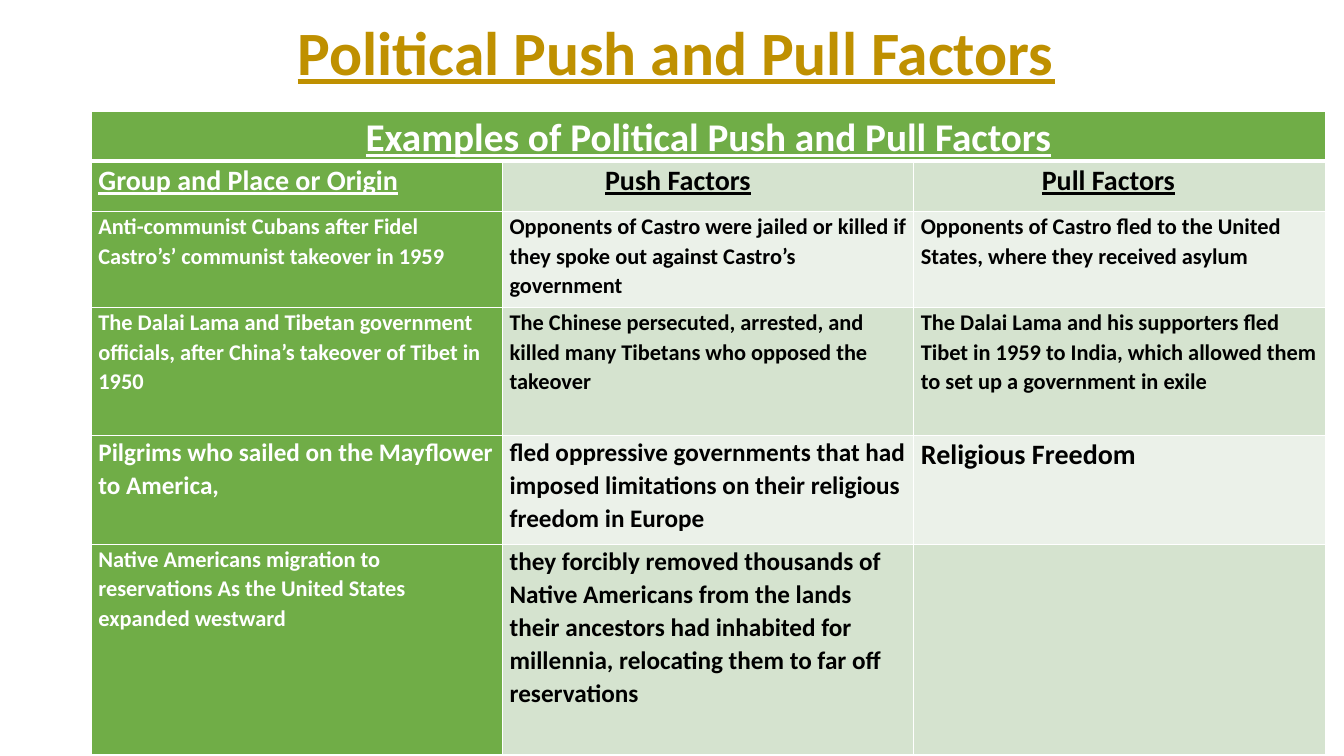
from dataclasses import dataclass

from lxml.etree import SubElement
from pptx import Presentation
from pptx.dml.color import RGBColor
from pptx.enum.text import MSO_ANCHOR, PP_ALIGN
from pptx.oxml.ns import qn
from pptx.util import Inches, Pt


@dataclass(frozen=True)
class Theme:
    font: str = "Calibri"
    gold: str = "BF9000"
    green: str = "70AD47"
    bands: tuple = ("EBF1E9", "D5E3CF")
    white: str = "FFFFFF"
    black: str = "000000"
    title: int = 44
    banner: int = 28
    heading: int = 20
    large: int = 18
    body: int = 16
    line: int = 1
    thick_line: int = 3


T = Theme()
WIDTH, HEIGHT = Inches(13.33), Inches(7.5)
LEFT, COLUMN = 6.8, 30.6
ROWS = (6.67, 6.67, 12.67, 16.93, 14.4, 27.87)
BANNER = "Examples of Political Push and Pull Factors"
HEADINGS = (
    ("Group and Place or Origin", 0),
    ("Push Factors", 7.1),
    ("Pull Factors", 9),
)
GROUPS = (
    (("Anti-communist Cubans after Fidel Castro’s’ communist takeover in 1959", T.body),
     ("Opponents of Castro were jailed or killed if they spoke out against "
      "Castro’s government", T.body),
     ("Opponents of Castro fled to the United States, where they received asylum", T.body)),
    (("The Dalai Lama and Tibetan government officials, after China’s takeover "
      "of Tibet in 1950", T.body),
     ("The Chinese persecuted, arrested, and killed many Tibetans who opposed "
      "the takeover", T.body),
     ("The Dalai Lama and his supporters fled Tibet in 1959 to India, which "
      "allowed them to set up a government in exile", T.body)),
    (("Pilgrims who sailed on the Mayflower to America,", T.large),
     ("fled oppressive governments that had imposed limitations on their "
      "religious freedom in Europe", T.large),
     ("Religious Freedom", T.heading)),
    (("Native Americans migration to reservations As the United States "
      "expanded westward", T.body),
     ("they forcibly removed thousands of Native Americans from the lands their "
      "ancestors had inhabited for millennia, relocating them to far off "
      "reservations", T.large),
     ("", T.large)),
)


def across(percent):
    return int(WIDTH * percent / 100)


def down(percent):
    return int(HEIGHT * percent / 100)


def write(tf, text, *, size, color, underline=False, align=PP_ALIGN.LEFT,
          indent=0, spacing=1.07):
    tf.word_wrap = True
    p = tf.paragraphs[0]
    p.alignment = align
    p.line_spacing = spacing
    p._p.get_or_add_pPr().set("marL", str(across(indent)))
    if not text:
        p.font.size = Pt(size)
        return
    r = p.add_run()
    r.text = text
    r.font.name = T.font
    r.font.size = Pt(size)
    r.font.bold = True
    r.font.underline = underline
    r.font.color.rgb = RGBColor.from_string(color)


def set_borders(cell, bottom=T.line, top=T.line):
    tcPr = cell._tc.get_or_add_tcPr()
    sides = (("a:lnL", T.line), ("a:lnR", T.line), ("a:lnT", top), ("a:lnB", bottom))
    for tag, width in sides:
        ln = SubElement(tcPr, qn(tag), w=str(Pt(width)))
        fill = SubElement(ln, qn("a:solidFill"))
        SubElement(fill, qn("a:srgbClr"), val=T.white)


def style_cell(cell, fill, **borders):
    set_borders(cell, **borders)
    cell.fill.solid()
    cell.fill.fore_color.rgb = RGBColor.from_string(fill)
    cell.margin_left = cell.margin_right = Inches(0.07)
    cell.margin_top = cell.margin_bottom = 0


def add_title(s, text):
    sp = s.shapes.add_textbox(across(LEFT), down(1.73), across(91), down(11.2))
    tf = sp.text_frame
    tf.vertical_anchor = MSO_ANCHOR.MIDDLE
    write(tf, text, size=T.title, color=T.gold, underline=True, indent=14.6, spacing=0.9)


def add_factors_table(s):
    columns = len(HEADINGS)
    table = s.shapes.add_table(len(ROWS), columns, across(LEFT), down(14.67),
                               across(COLUMN * columns), down(sum(ROWS))).table
    for column in table.columns:
        column.width = across(COLUMN)
    for row, share in zip(table.rows, ROWS):
        row.height = down(share)

    banner = table.cell(0, 0)
    banner.merge(table.cell(0, columns - 1))
    for c in range(columns):
        style_cell(table.cell(0, c), T.green, bottom=T.thick_line)
    write(banner.text_frame, BANNER, size=T.banner, color=T.white,
          underline=True, align=PP_ALIGN.CENTER)

    headings = [(text, dict(size=T.heading, underline=True, indent=indent))
                for text, indent in HEADINGS]
    groups = [[(text, dict(size=size)) for text, size in group] for group in GROUPS]
    for r, entries in enumerate([headings, *groups], 1):
        for c, (text, style) in enumerate(entries):
            cell = table.cell(r, c)
            style_cell(cell, T.bands[r % 2] if c else T.green,
                       top=T.thick_line if r == 1 else T.line)
            write(cell.text_frame, text, color=T.black if c else T.white, **style)


def main():
    prs = Presentation()
    prs.slide_width, prs.slide_height = WIDTH, HEIGHT
    s = prs.slides.add_slide(prs.slide_layouts[6])
    add_title(s, "Political Push and Pull Factors")
    add_factors_table(s)
    prs.save("out.pptx")


if __name__ == "__main__":
    main()
